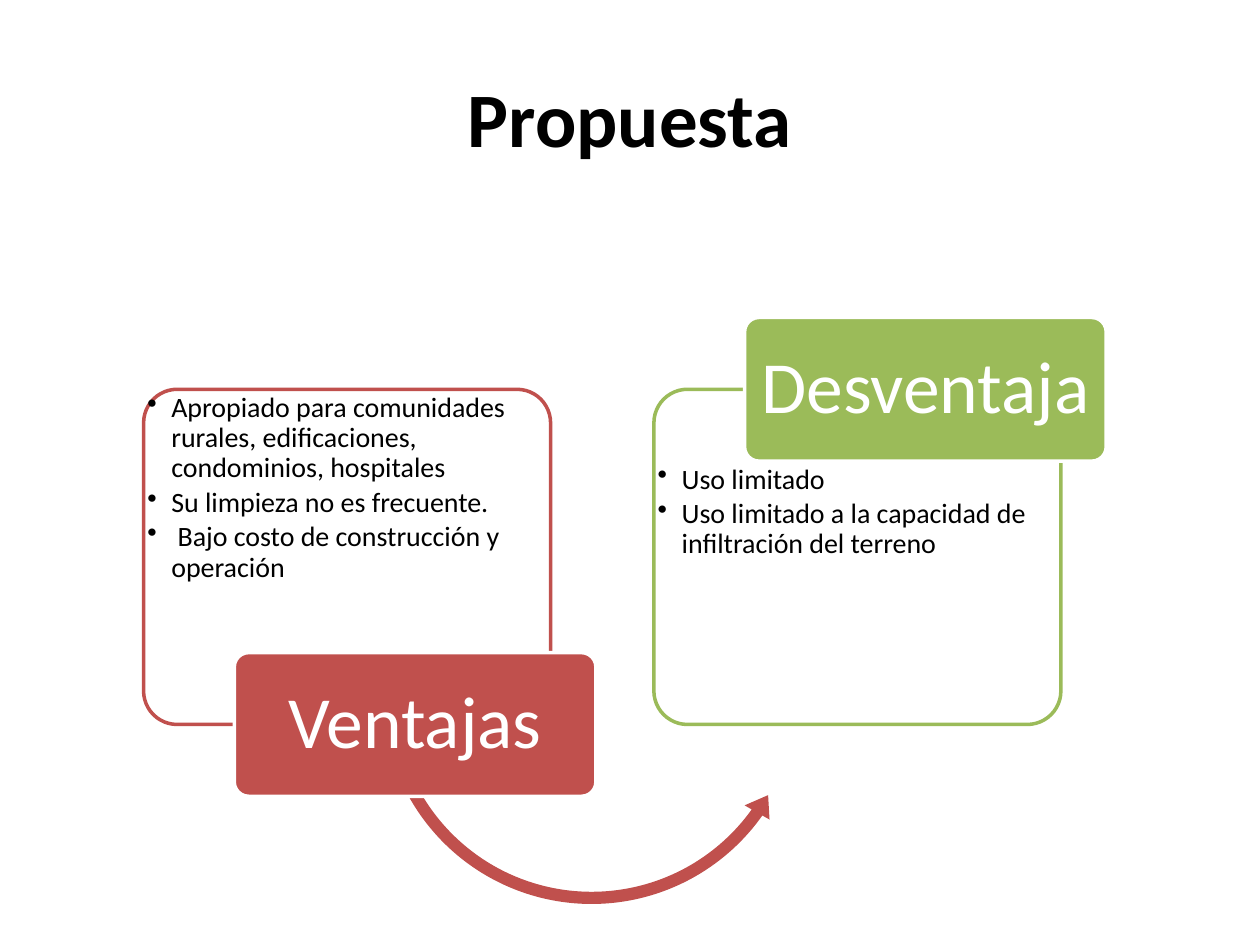
"""Build the Propuesta slide: advantages and disadvantages joined by a curved arrow."""
import pptx
import pptx.dml.color
import pptx.enum.shapes
import pptx.enum.text
import pptx.oxml.ns
import pptx.util
from lxml import etree

SHAPE = pptx.enum.shapes.MSO_SHAPE
ALIGN = pptx.enum.text.PP_ALIGN
ANCHOR = pptx.enum.text.MSO_ANCHOR
Inches, Pt = pptx.util.Inches, pptx.util.Pt
RED, GREEN, WHITE, BLACK = "C0504D", "9BBB59", "FFFFFF", "000000"


def paint(fmt, color):
    """Apply a hex colour to a fill, or to a font or line."""
    if hasattr(fmt, "solid"):
        fmt.solid()
        fmt.fore_color.rgb = pptx.dml.color.RGBColor.from_string(color)
    else:
        fill = fmt.fill
        fill.solid()
        fill.fore_color.rgb = pptx.dml.color.RGBColor.from_string(color)


def add_run(p, text, size, color, bold=False):
    """Add one formatted run to a paragraph."""
    r = p.add_run()
    r.text = text
    r.font.name, r.font.size, r.font.bold = "Calibri", Pt(size), bold
    paint(r.font, color)


prs = pptx.Presentation()
prs.slide_width, prs.slide_height = Inches(10), Inches(7.5)
s = prs.slides.add_slide(prs.slide_layouts[5])

title = s.shapes.title
title.left, title.top, title.width, title.height = Inches(0.5), Inches(0.3), Inches(9), Inches(1.25)
tf = title.text_frame
tf.vertical_anchor = ANCHOR.MIDDLE
p = tf.paragraphs[0]
p.alignment = ALIGN.CENTER
add_run(p, "Propuesta", 44, BLACK, True)

arrow = s.shapes.add_shape(SHAPE.LEFT_CIRCULAR_ARROW, Inches(2.97), Inches(3.79), Inches(3.45), Inches(3.45))
for i, value in enumerate((0.028, 3.481, 21.236, 90.245, 0.033)):
    arrow.adjustments[i] = value
arrow.shadow.inherit = False
paint(arrow.fill, RED)
arrow.line.fill.background()

left, pitch, top = Inches(1.14), Inches(4.05), Inches(3.09)
panel_w, panel_h = Inches(3.23), Inches(2.66)
label_w, label_h = Inches(2.87), Inches(1.14)
label_shift = Inches(0.72)
panels = [
    ("Ventajas", RED, panel_h, 0, [
        "Apropiado para comunidades rurales, edificaciones, condominios, hospitales",
        "Su limpieza no es frecuente.",
        " Bajo costo de construcción y operación"]),
    ("Desventaja", GREEN, 0, label_h // 2, [
        "Uso limitado",
        "Uso limitado a la capacidad de infiltración del terreno"]),
]

for col, (name, color, label_mid, text_drop, items) in enumerate(panels):
    x = left + col * pitch
    panel = (x, top, panel_w, panel_h, WHITE, color)
    label = (x + label_shift, top + label_mid - label_h // 2, label_w, label_h, color, WHITE)
    for *box, fill, line in (panel, label):
        sp = s.shapes.add_shape(SHAPE.ROUNDED_RECTANGLE, *box)
        sp.adjustments[0] = 0.1
        sp.shadow.inherit = False
        paint(sp.fill, fill)
        paint(sp.line, line)
        sp.line.width = Pt(2)
        if fill == WHITE:
            clr = sp.fill._xPr.find(".//" + pptx.oxml.ns.qn("a:srgbClr"))
            etree.SubElement(clr, pptx.oxml.ns.qn("a:alpha"), val="90000")
            tb = s.shapes.add_textbox(x, top + text_drop, panel_w, panel_h - label_h // 2)
            tf = tb.text_frame
            tf.word_wrap = True
            tf.margin_left = tf.margin_right = tf.margin_top = tf.margin_bottom = Inches(0.03)
            for i, item in enumerate(items):
                p = tf.paragraphs[0] if i == 0 else tf.add_paragraph()
                p.level = 1
                p.line_spacing, p.space_after = 0.9, Pt(2.5)
                pPr = p._p.get_or_add_pPr()
                pPr.set("marL", str(Inches(0.19)))
                pPr.set("indent", str(-Inches(0.19)))
                etree.SubElement(pPr, pptx.oxml.ns.qn("a:buChar"), char="•")
                add_run(p, item, 16, BLACK)

    tf = sp.text_frame
    tf.word_wrap = True
    tf.vertical_anchor = ANCHOR.MIDDLE
    tf.margin_left = tf.margin_right = tf.margin_top = tf.margin_bottom = Inches(0.05)
    p = tf.paragraphs[0]
    p.alignment, p.line_spacing = ALIGN.CENTER, 0.9
    add_run(p, name, 42, WHITE)

prs.save("out.pptx")
